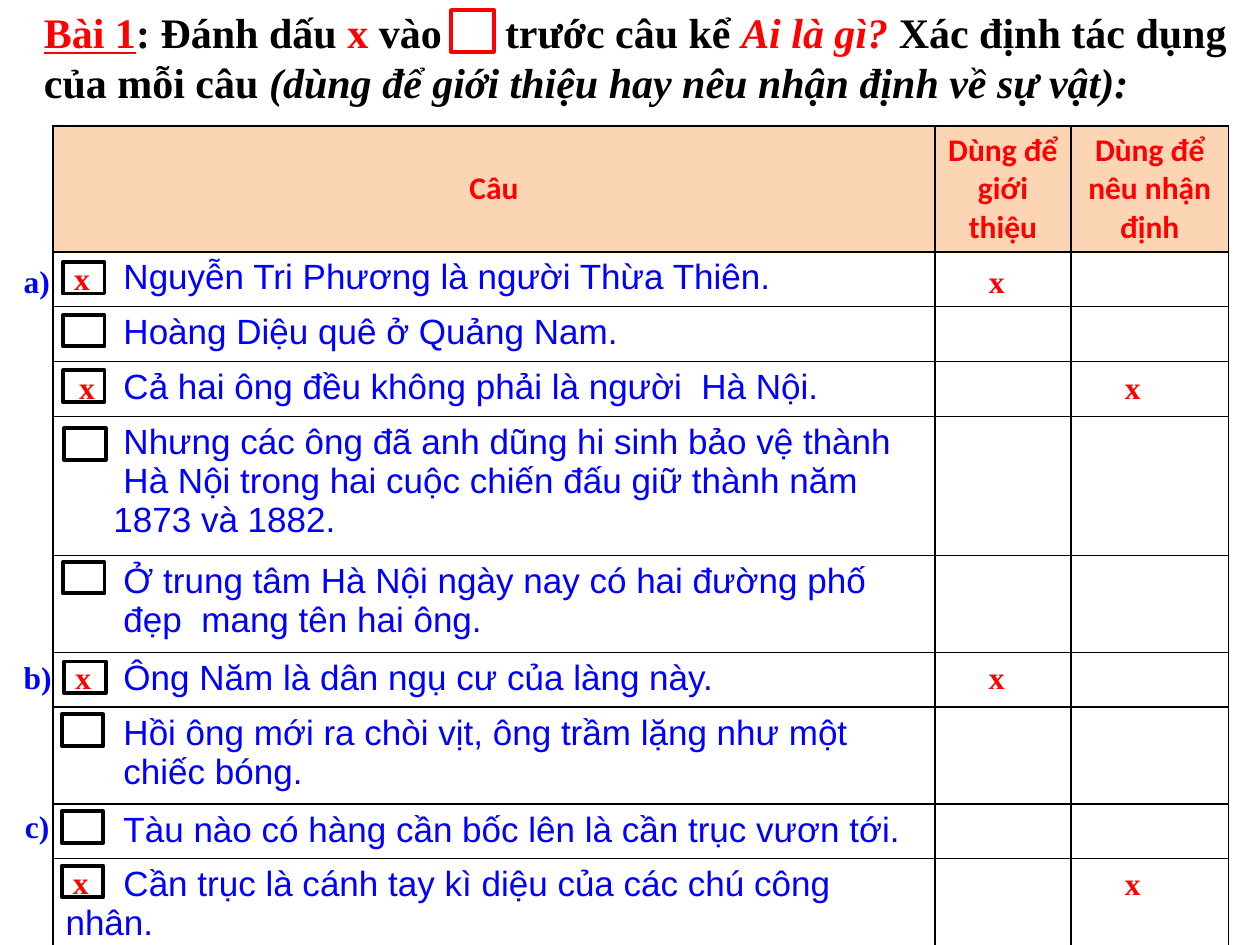
from lxml import etree
from pptx import Presentation
from pptx import util as u
from pptx.dml.color import RGBColor
from pptx.enum import shapes, text
from pptx.oxml import ns

HUES = {"red": "FF0000", "blue": "0000FF", "black": "000000", "peach": "FCD5B5"}
SERIF, SANS, HEAD = "Times New Roman", "Arial", "Calibri"
MID = text.PP_ALIGN.CENTER


def hue(name):
    return RGBColor.from_string(HUES[name])


def sub(node, tag, **attrs):
    return etree.SubElement(node, ns.qn(tag), **attrs)


class Sheet:
    def __init__(self, slide):
        self.slide = slide

    def run(self, para, words, color, size, font=SERIF, bold=True,
            slant=False, under=False):
        part = para.add_run()
        part.text = words
        face = part.font
        face.name, face.size = font, u.Pt(size)
        face.bold, face.italic, face.underline = bold, slant, under
        face.color.rgb = hue(color)

    def label(self, left, top, width, height, runs, size=18, wrap=True):
        """Add a text box; each run is (words, color, options)."""
        box = self.slide.shapes.add_textbox(
            u.Inches(left), u.Inches(top), u.Inches(width), u.Inches(height))
        frame = box.text_frame
        frame.word_wrap = wrap
        frame.auto_size = text.MSO_AUTO_SIZE.SHAPE_TO_FIT_TEXT
        para = frame.paragraphs[0]
        for words, color, opts in runs:
            self.run(para, words, color, size, **opts)
        return para

    def box(self, left, top, width=0.33, height=0.25, color="black"):
        rect = self.slide.shapes.add_shape(
            shapes.MSO_SHAPE.RECTANGLE, u.Inches(left), u.Inches(top),
            u.Inches(width), u.Inches(height))
        rect.shadow.inherit = False
        rect.fill.background()
        rect.line.color.rgb = hue(color)
        rect.line.width = u.Pt(2.25)

    def grid(self, left, top, cols, rows):
        frame = self.slide.shapes.add_table(
            len(rows), len(cols), u.Inches(left), u.Inches(top),
            u.Inches(sum(cols)), u.Inches(sum(rows)))
        table = frame.table
        table.first_row = table.horz_banding = False
        for col, width in zip(table.columns, cols):
            col.width = u.Inches(width)
        for row, height in zip(table.rows, rows):
            row.height = u.Inches(height)
        for cell in table.iter_cells():
            self.edge(cell)
        return table

    def edge(self, cell):
        """Rule all four sides of a cell and leave it unfilled."""
        props = cell._tc.get_or_add_tcPr()
        for side in "LRTB":
            line = sub(props, f"a:ln{side}", w=str(u.Pt(1)))
            sub(sub(line, "a:solidFill"), "a:srgbClr", val=HUES["black"])
        cell.fill.background()

    def head(self, cell, words):
        cell.fill.solid()
        cell.fill.fore_color.rgb = hue("peach")
        cell.margin_top = cell.margin_bottom = u.Inches(0.04)
        cell.vertical_anchor = text.MSO_ANCHOR.MIDDLE
        para = cell.text_frame.paragraphs[0]
        para.alignment = MID
        self.run(para, words, "red", 18, HEAD)

    def body(self, cell, lines):
        frame = cell.text_frame
        for i, (words, indent) in enumerate(lines):
            para = frame.add_paragraph() if i else frame.paragraphs[0]
            props = para._p.get_or_add_pPr()
            props.set("marL", "0")
            props.set("indent", str(u.Inches(indent)))
            self.run(para, words, "blue", 20, SANS, bold=False)


# Sentences, line by line, with the first-line indent
STEP = 0.46
ROWS = [
    [("Nguyễn Tri Phương là người Thừa Thiên.", STEP)],
    [("Hoàng Diệu quê ở Quảng Nam.", STEP)],
    [("Cả hai ông đều không phải là người  Hà Nội.", STEP)],
    [("Nhưng các ông đã anh dũng hi sinh bảo vệ thành", STEP),
     ("Hà Nội trong hai cuộc chiến đấu giữ thành năm", STEP),
     ("1873 và 1882.", 0.38)],
    [("Ở trung tâm Hà Nội ngày nay có hai đường phố", STEP),
     ("đẹp  mang tên hai ông.", STEP)],
    [("Ông Năm là dân ngụ cư của làng này.", STEP)],
    [("Hồi ông mới ra chòi vịt, ông trầm lặng như một", STEP),
     ("chiếc bóng.", STEP)],
    [("Tàu nào có hàng cần bốc lên là cần trục vươn tới.", STEP)],
    [("Cần trục là cánh tay kì diệu của các chú công nhân.", STEP)],
]
HEADS = ["Câu", "Dùng để giới thiệu", "Dùng để nêu nhận định"]
HIGH = [1, 0.43, 0.43, 0.44, 1.1, 0.77, 0.43, 0.77, 0.43, 0.77]
BOXES = [(0.5, 2.08), (0.5, 2.5), (0.5, 2.94), (0.51, 3.4), (0.5, 4.46),
         (0.51, 5.25), (0.49, 5.67), (0.49, 6.44), (0.49, 6.87)]
PARTS = [("a)", 0.09, 2.03), ("b)", 0.09, 5.17), ("c)", 0.1, 6.36)]
MARKS = [(0.49, 2.01), (7.75, 2.03), (0.53, 2.87), (8.83, 2.87),
         (0.5, 5.17), (7.75, 5.17), (0.48, 6.8), (8.83, 6.81)]


def main():
    deck = Presentation()
    deck.slide_width, deck.slide_height = u.Inches(10), u.Inches(7.5)
    sheet = Sheet(deck.slides.add_slide(deck.slide_layouts[6]))

    # Task, with a tab that leaves room for the red box
    task = sheet.label(0.25, 0, 9.75, 0.91, [
        ("Bài 1", "red", {"under": True}),
        (": Đánh dấu ", "black", {}),
        ("x ", "red", {}),
        ("vào\ttrước câu kể ", "black", {}),
        ("Ai là gì? ", "red", {"slant": True}),
        ("Xác định tác dụng của mỗi câu ", "black", {}),
        ("(dùng để giới thiệu hay nêu nhận định về sự vật):", "black",
         {"slant": True}),
    ], size=24)
    tabs = sub(task._p.get_or_add_pPr(), "a:tabLst")
    sub(tabs, "a:tab", pos=str(u.Inches(3.66)), algn="l")
    sheet.box(3.58, 0.08, 0.34, 0.33, "red")

    # Table of sentences
    table = sheet.grid(0.42, 1, [7, 1.08, 1.25], HIGH)
    for col, words in enumerate(HEADS):
        sheet.head(table.cell(0, col), words)
    for row, lines in enumerate(ROWS, 1):
        sheet.body(table.cell(row, 0), lines)

    # Tick boxes, part letters and answers
    for left, top in BOXES:
        sheet.box(left, top)
    for words, left, top in PARTS:
        para = sheet.label(left, top, 0.44, 0.4, [(words, "blue", {})])
        para.alignment = text.PP_ALIGN.JUSTIFY
    for left, top in MARKS:
        sheet.label(left, top, 0.33, 0.4, [("x", "red", {})], wrap=False)

    deck.save("out.pptx")


if __name__ == "__main__":
    main()
